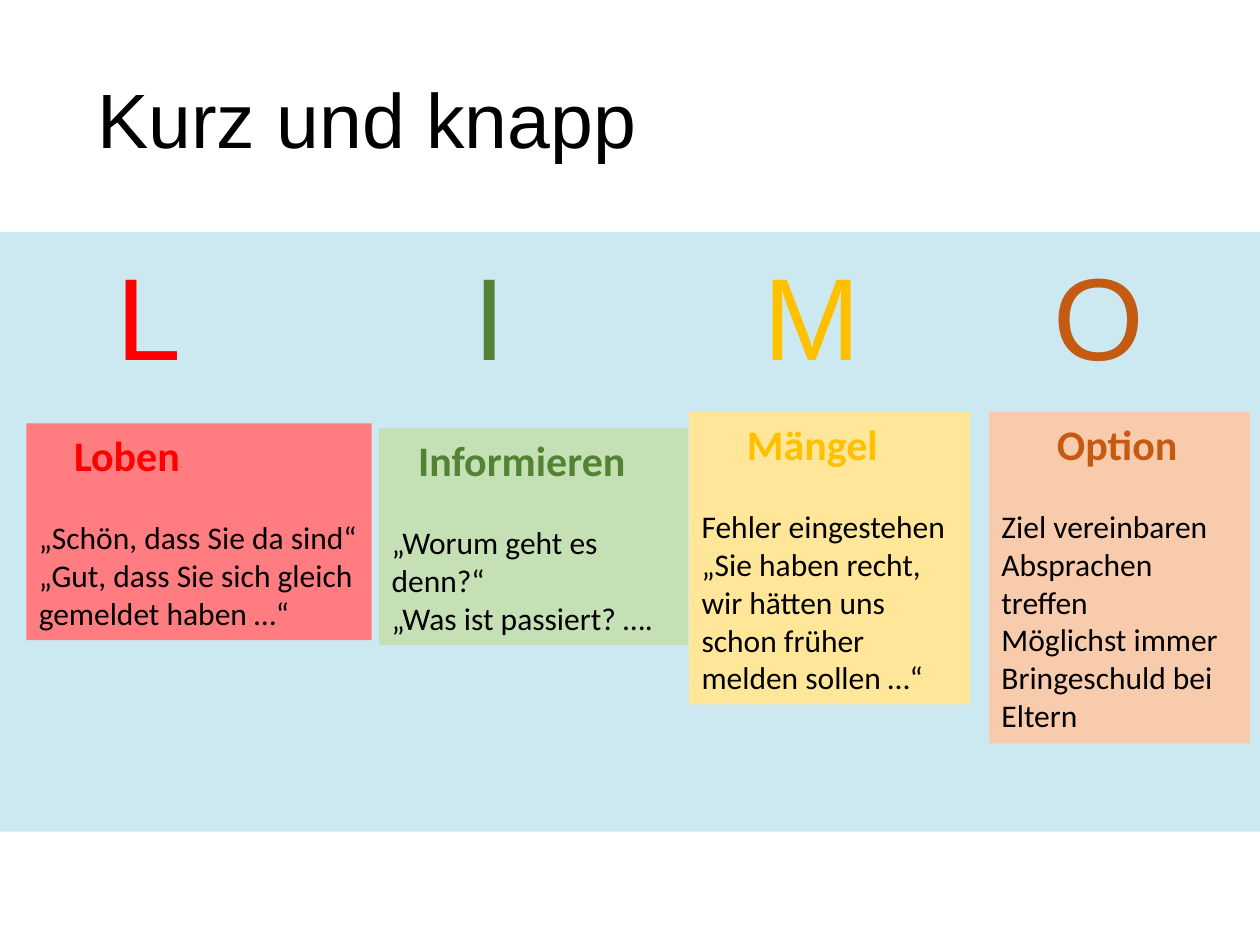
from pptx import Presentation
from pptx.dml.color import RGBColor
from pptx.enum import shapes, text
from pptx.oxml import parse_xml
from pptx.oxml.ns import nsdecls
from pptx.util import Inches, Pt

BLACK = RGBColor(0x00, 0x00, 0x00)
BAND_BLUE = RGBColor(0xCC, 0xE9, 0xF2)
RED = RGBColor(0xFF, 0x00, 0x00)
GREEN = RGBColor(0x54, 0x82, 0x35)
GOLD = RGBColor(0xFF, 0xC0, 0x00)
BROWN = RGBColor(0xC5, 0x5A, 0x11)
LIGHT_RED = RGBColor(0xFF, 0x7C, 0x80)
LIGHT_GREEN = RGBColor(0xC5, 0xE0, 0xB4)
LIGHT_GOLD = RGBColor(0xFF, 0xE6, 0x99)
LIGHT_BROWN = RGBColor(0xF8, 0xCB, 0xAD)

LETTERS = [("L", RED), ("I", GREEN), ("M", GOLD), ("O", BROWN)]
LETTER_TABS = [0.47, 3.3, 5.6, 7.9]

# Position and size, fill, heading, heading colour, heading indent, lines
CARDS = [
    ((0.21, 3.36, 2.74, 1.72), LIGHT_RED, "Loben", RED, 0.28,
     ["„Schön, dass Sie da sind“",
      "„Gut, dass Sie sich gleich gemeldet haben …“"]),
    ((3.01, 3.4, 2.45, 1.72), LIGHT_GREEN, "Informieren", GREEN, 0.21,
     ["„Worum geht es denn?“", "„Was ist passiert? …."]),
    ((5.47, 3.27, 2.23, 2.32), LIGHT_GOLD, "Mängel", GOLD, 0.36,
     ["Fehler eingestehen",
      "„Sie haben recht, wir hätten uns schon früher melden sollen …“"]),
    ((7.85, 3.27, 2.07, 2.63), LIGHT_BROWN, "Option", BROWN, 0.44,
     ["Ziel vereinbaren", "Absprachen treffen",
      "Möglichst immer Bringeschuld bei Eltern"]),
]


def add_run(paragraph, content, size, color, font="Calibri", bold=False):
    run = paragraph.add_run()
    run.text = content
    run.font.name = font
    run.font.size = Pt(size)
    run.font.bold = bold
    run.font.color.rgb = color


def add_rectangle(slide, box, fill):
    shape = slide.shapes.add_shape(
        shapes.MSO_SHAPE.RECTANGLE, *[Inches(value) for value in box])
    shape.shadow.inherit = False
    shape.fill.solid()
    shape.fill.fore_color.rgb = fill
    shape.line.fill.background()
    return shape


def set_title(slide, content):
    title = slide.shapes.title
    title.left, title.top = Inches(0.67), Inches(0.25)
    title.width, title.height = Inches(8.66), Inches(1.46)
    frame = title.text_frame
    frame.auto_size = text.MSO_AUTO_SIZE.NONE
    frame.vertical_anchor = text.MSO_ANCHOR.MIDDLE
    paragraph = frame.paragraphs[0]
    paragraph.alignment = text.PP_ALIGN.LEFT
    paragraph.line_spacing = 0.9
    add_run(paragraph, content, 44, BLACK, "Arial")


def add_letters(slide):
    """Put the four initials on one line, each at its own tab stop."""
    box = slide.shapes.add_textbox(
        Inches(0.36), Inches(1.94), Inches(9.44), Inches(1.18))
    frame = box.text_frame
    frame.word_wrap = True
    frame.margin_top = Inches(0.12)
    paragraph = frame.paragraphs[0]
    paragraph.line_spacing = 0.9
    stops = "".join(f'<a:tab pos="{Inches(stop)}" algn="l"/>' for stop in LETTER_TABS)
    paragraph._p.get_or_add_pPr().append(
        parse_xml(f'<a:tabLst {nsdecls("a")}>{stops}</a:tabLst>'))
    for letter, color in LETTERS:
        add_run(paragraph, "\t" + letter, 66.6, color, "Arial")


def add_card(slide, box, fill, heading, color, indent, lines):
    frame = add_rectangle(slide, box, fill).text_frame
    frame.word_wrap = True
    frame.vertical_anchor = text.MSO_ANCHOR.TOP
    frame.auto_size = text.MSO_AUTO_SIZE.SHAPE_TO_FIT_TEXT
    paragraph = frame.paragraphs[0]
    paragraph.alignment = text.PP_ALIGN.LEFT
    paragraph._p.get_or_add_pPr().set("indent", str(Inches(indent)))
    add_run(paragraph, heading, 24, color, bold=True)
    for index, line in enumerate(lines):
        paragraph = frame.add_paragraph()
        paragraph.alignment = text.PP_ALIGN.LEFT
        paragraph.space_before = Pt(22 if index == 0 else 0)
        add_run(paragraph, line, 18, BLACK)


def main():
    presentation = Presentation()
    presentation.slide_width = Inches(10)
    presentation.slide_height = Inches(7.5)
    slide = presentation.slides.add_slide(presentation.slide_layouts[5])
    set_title(slide, "Kurz und knapp")
    add_rectangle(slide, (0, 1.84, 10, 4.76), BAND_BLUE)
    add_letters(slide)
    for card in CARDS:
        add_card(slide, *card)
    presentation.save("out.pptx")


if __name__ == "__main__":
    main()
